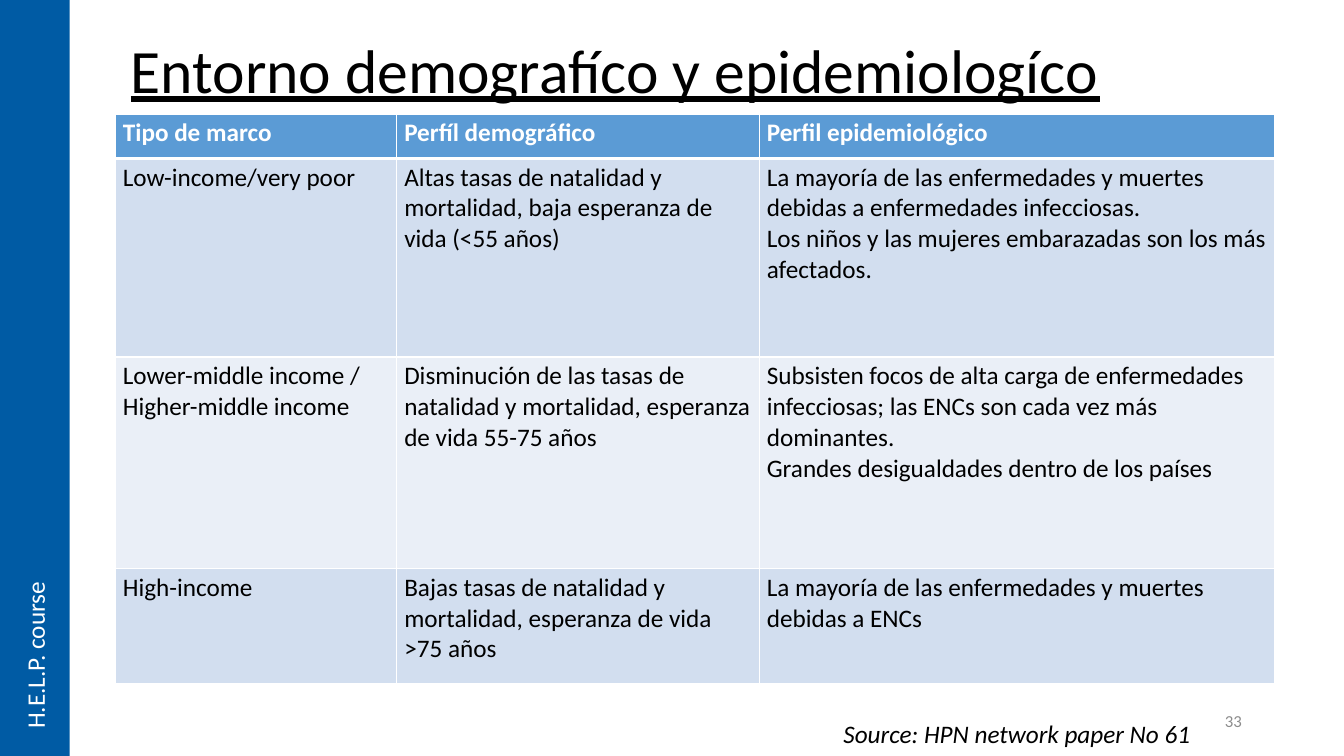
"""Build a slide with a table of demographic and epidemiological settings."""
from lxml.etree import SubElement
from pptx import Presentation
from pptx.dml.color import RGBColor
from pptx.enum.shapes import MSO_SHAPE
from pptx.enum.text import MSO_ANCHOR, PP_ALIGN
from pptx.oxml.ns import qn
from pptx.util import Pt

COLORS = {"white": "FFFFFF", "black": "000000", "grey": "8C8C8C", "band": "005BA4",
          "header": "5B9BD5", "odd": "D2DEEF", "even": "EAEFF7"}
TITLE = "Entorno demografíco y epidemiologíco"
SOURCE = "Source: HPN network paper No 61"
PAGE = "33"
COURSE = "H.E.L.P. course"
SETTINGS = [
    ("Tipo de marco", "Perfíl demográfico", "Perfil epidemiológico"),
    ("Low-income/very poor",
     "Altas tasas de natalidad y mortalidad, baja esperanza de vida (<55 años)",
     "La mayoría de las enfermedades y muertes debidas a enfermedades infecciosas.\n"
     "Los niños y las mujeres embarazadas son los más afectados."),
    ("Lower-middle income / Higher-middle income",
     "Disminución de las tasas de natalidad y mortalidad, esperanza de vida 55-75 años",
     "Subsisten focos de alta carga de enfermedades infecciosas; "
     "las ENCs son cada vez más dominantes.\n"
     "Grandes desigualdades dentro de los países"),
    ("High-income",
     "Bajas tasas de natalidad y mortalidad, esperanza de vida >75 años",
     "La mayoría de las enfermedades y muertes debidas a ENCs"),
]
COLUMN_WIDTHS = (201, 259, 368)
ROW_HEIGHTS = (31.7, 141.8, 151.2, 82)
TABLE_LEFT, TABLE_TOP = 82.4, 81.5
CELL_MARGINS = {"margin_left": Pt(5.4), "margin_right": Pt(5.4),
                "margin_top": Pt(2.7), "margin_bottom": Pt(2.7)}


def color(name):
    return RGBColor.from_string(COLORS[name])


def write(frame, text, ink="black", align=PP_ALIGN.LEFT, spacing=None, **font):
    frame.text = text
    for paragraph in frame.paragraphs:
        paragraph.alignment = align
        paragraph.line_spacing = spacing
        for attribute, value in {"name": "Calibri", "size": Pt(18), **font}.items():
            setattr(paragraph.font, attribute, value)
        paragraph.font.color.rgb = color(ink)


def add_text(slide, box, text, anchor=MSO_ANCHOR.TOP, **style):
    frame = slide.shapes.add_textbox(*map(Pt, box)).text_frame
    frame.word_wrap = True
    frame.vertical_anchor = anchor
    write(frame, text, **style)


def add_borders(cell, widths):
    properties = cell._tc.get_or_add_tcPr()
    for side, width in widths.items():
        line = SubElement(properties, qn(f"a:ln{side}"), w=str(Pt(width)))
        SubElement(SubElement(line, qn("a:solidFill")), qn("a:srgbClr"), val=COLORS["white"])


def add_band(slide):
    band = slide.shapes.add_shape(MSO_SHAPE.RECTANGLE, 0, 0, Pt(49.7), Pt(540))
    band.shadow.inherit = False
    band.fill.solid()
    band.fill.fore_color.rgb = color("band")
    band.line.fill.background()
    frame = band.text_frame
    frame.vertical_anchor = MSO_ANCHOR.MIDDLE
    write(frame, COURSE, ink="white")
    frame._txBody.bodyPr.set("vert", "vert270")
    frame.paragraphs[0]._p.get_or_add_pPr().set("marL", str(Pt(12.2)))


def add_settings(slide):
    table = slide.shapes.add_table(
        len(SETTINGS), len(COLUMN_WIDTHS), Pt(TABLE_LEFT), Pt(TABLE_TOP),
        Pt(sum(COLUMN_WIDTHS)), Pt(sum(ROW_HEIGHTS))).table
    for column, width in zip(table.columns, COLUMN_WIDTHS):
        column.width = Pt(width)
    for index, (row, height, texts) in enumerate(zip(table.rows, ROW_HEIGHTS, SETTINGS)):
        row.height = Pt(height)
        is_header = index == 0
        tint = "header" if is_header else "odd" if index % 2 else "even"
        borders = {"L": 1, "R": 1, "T": 3 if index == 1 else 1, "B": 3 if is_header else 1}
        for cell, text in zip(row.cells, texts):
            write(cell.text_frame, text, ink="white" if is_header else "black", bold=is_header)
            for attribute, value in CELL_MARGINS.items():
                setattr(cell, attribute, value)
            add_borders(cell, borders)
            cell.fill.solid()
            cell.fill.fore_color.rgb = color(tint)


def main():
    deck = Presentation()
    deck.slide_width, deck.slide_height = Pt(960), Pt(540)
    slide = deck.slides.add_slide(deck.slide_layouts[6])
    add_text(slide, (86.4, 0, 828, 104.4), TITLE, MSO_ANCHOR.MIDDLE,
             spacing=0.9, size=Pt(44), underline=True)
    add_text(slide, (678.2, 500.4, 216, 28.8), PAGE, MSO_ANCHOR.MIDDLE,
             ink="grey", align=PP_ALIGN.RIGHT, size=Pt(12))
    add_text(slide, (595.4, 509.8, 268, 29), SOURCE, italic=True)
    add_band(slide)
    add_settings(slide)
    deck.save("out.pptx")


if __name__ == "__main__":
    main()
